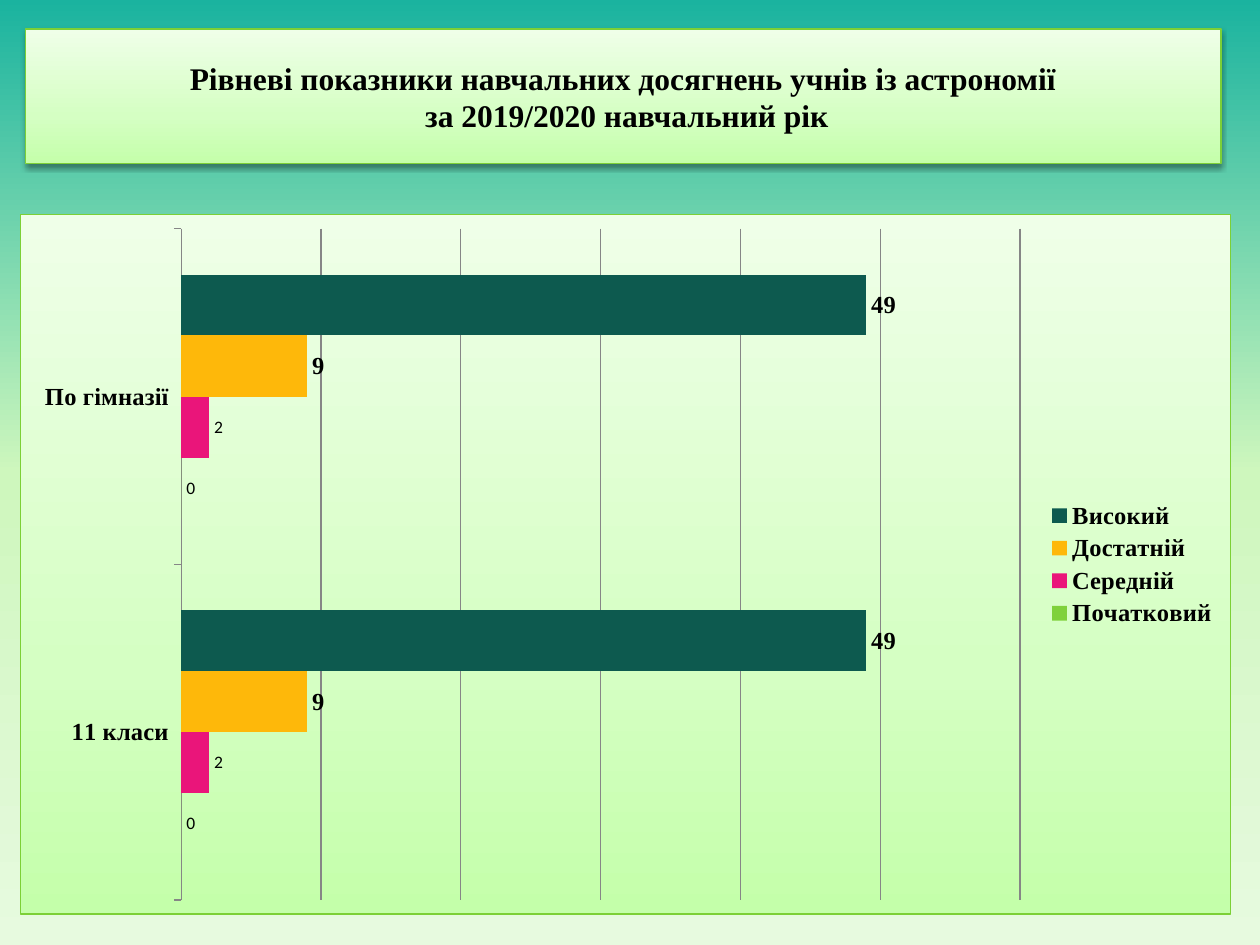
from lxml import etree
from pptx import Presentation
from pptx.chart.data import CategoryChartData
from pptx.dml.color import RGBColor
from pptx.enum.chart import XL_CHART_TYPE, XL_LABEL_POSITION, XL_LEGEND_POSITION, XL_TICK_MARK
from pptx.enum.text import MSO_ANCHOR, PP_ALIGN
from pptx.oxml.ns import qn
from pptx.util import Inches, Pt

BAR_CLUSTERED = XL_CHART_TYPE.BAR_CLUSTERED
OUTSIDE_END = XL_LABEL_POSITION.OUTSIDE_END
LEGEND_RIGHT = XL_LEGEND_POSITION.RIGHT
TICK_OUTSIDE, TICK_NONE = XL_TICK_MARK.OUTSIDE, XL_TICK_MARK.NONE
CENTER = PP_ALIGN.CENTER
MIDDLE = MSO_ANCHOR.MIDDLE

BLACK = RGBColor(0x00, 0x00, 0x00)
GRAY = RGBColor(0x86, 0x86, 0x86)
LIME = RGBColor(0x7C, 0xD0, 0x36)
GREEN = RGBColor(0x7F, 0xD1, 0x3B)
PINK = RGBColor(0xEA, 0x15, 0x7A)
AMBER = RGBColor(0xFE, 0xB8, 0x0A)
TEAL = RGBColor(0x0D, 0x5A, 0x4F)

BACKGROUND_STOPS = [(0, RGBColor(0x1A, 0xB3, 0x9F)), (50, RGBColor(0xCE, 0xF7, 0xBD)),
                    (100, RGBColor(0xE7, 0xFA, 0xDF))]
PANEL_STOPS = [(0, RGBColor(0xC4, 0xFF, 0xAA)), (35, RGBColor(0xD5, 0xFF, 0xC3)),
               (100, RGBColor(0xEF, 0xFF, 0xE8))]

TITLE_LINES = ["Рівневі показники навчальних досягнень учнів із астрономії",
               " за 2019/2020 навчальний рік"]
CATEGORIES = ["11 класи", "По гімназії"]
# Name, values, colour, emphasised labels
LEVELS = [("Початковий", (0, 0), GREEN, False),
          ("Середній", (2, 2), PINK, False),
          ("Достатній", (9, 9), AMBER, True),
          ("Високий", (49, 49), TEAL, True)]


def add_element(parent, tag, **attributes):
    return etree.SubElement(parent, qn(tag), attributes)


def add_color(parent, color):
    return add_element(parent, "a:srgbClr", val=str(color))


def set_gradient(gradient, stops, angle):
    """Give a gradFill element its stops (percent) and clockwise angle."""
    for child in list(gradient):
        gradient.remove(child)
    stop_list = add_element(gradient, "a:gsLst")
    for position, color in stops:
        add_color(add_element(stop_list, "a:gs", pos=str(position * 1000)), color)
    add_element(gradient, "a:lin", ang=str(angle * 60000), scaled="0")


class SlideBuilder:
    heading_font = "Times New Roman"
    body_font = "Calibri"
    line_width = Pt(0.75)

    def __init__(self, presentation):
        self.slide = presentation.slides.add_slide(presentation.slide_layouts[5])

    def format_font(self, font, size, heading=True):
        font.name = self.heading_font if heading else self.body_font
        font.size = Pt(size)
        font.bold = heading
        font.color.rgb = BLACK

    def set_background(self, stops, angle):
        fill = self.slide.background.fill
        fill.gradient()
        set_gradient(next(self.slide.element.iter(qn("a:gradFill"))), stops, angle)

    def add_title(self, lines, left, top, width, height):
        title = self.slide.shapes.title
        title.left, title.top = Inches(left), Inches(top)
        title.width, title.height = Inches(width), Inches(height)
        title.fill.gradient()
        set_gradient(title.element.spPr.find(qn("a:gradFill")), PANEL_STOPS, 270)
        title.line.color.rgb = LIME
        title.line.width = self.line_width

        # Soft shadow below the panel
        title.shadow.inherit = False
        effects = title.element.spPr.find(qn("a:effectLst"))
        shadow = add_element(effects, "a:outerShdw", blurRad=str(Pt(3.1)),
                             dist=str(Pt(1.6)), dir="5400000", rotWithShape="0")
        add_element(add_color(shadow, BLACK), "a:alpha", val="38000")

        title.text_frame.vertical_anchor = MIDDLE
        paragraph = title.text_frame.paragraphs[0]
        paragraph.alignment = CENTER
        for index, line in enumerate(lines):
            if index:
                paragraph.add_line_break()
            run = paragraph.add_run()
            run.text = line
            self.format_font(run.font, 18)

    def add_bar_chart(self, categories, levels, left, top, width, height):
        data = CategoryChartData()
        data.categories = categories
        for name, values, _, _ in levels:
            data.add_series(name, values)
        chart = self.slide.shapes.add_chart(
            BAR_CLUSTERED, Inches(left), Inches(top), Inches(width), Inches(height), data).chart
        self.format_font(chart.font, 10, heading=False)
        chart.has_title = False
        chart.has_legend = True
        chart.legend.position = LEGEND_RIGHT
        chart.legend.include_in_layout = False
        self.format_font(chart.legend.font, 14)
        self.format_chart_area(chart)

        # Axes
        category_axis = chart.category_axis
        category_axis.major_tick_mark = TICK_OUTSIDE
        category_axis.minor_tick_mark = TICK_NONE
        category_axis.format.line.color.rgb = GRAY
        self.format_font(category_axis.tick_labels.font, 14)
        value_axis = chart.value_axis
        value_axis.visible = False
        value_axis.minimum_scale, value_axis.maximum_scale = 0, 60
        value_axis.major_unit = 10
        value_axis.has_major_gridlines = True
        value_axis.major_gridlines.format.line.color.rgb = GRAY

        # Bars and their values
        plot = chart.plots[0]
        plot.gap_width = 150
        plot.vary_by_categories = False
        for series, (_, _, color, emphasised) in zip(plot.series, levels):
            series.format.fill.solid()
            series.format.fill.fore_color.rgb = color
            labels = series.data_labels
            labels.show_value = True
            labels.position = OUTSIDE_END
            self.format_font(labels.font, 14 if emphasised else 10, heading=emphasised)

    def format_chart_area(self, chart):
        chart_space = chart.element
        properties = add_element(chart_space, "c:spPr")
        chart_space.find(qn("c:chart")).addnext(properties)
        set_gradient(add_element(properties, "a:gradFill"), PANEL_STOPS, 270)
        line = add_element(properties, "a:ln", w=str(self.line_width))
        add_color(add_element(line, "a:solidFill"), LIME)


def main():
    presentation = Presentation()
    presentation.slide_width, presentation.slide_height = Inches(10), Inches(7.5)
    builder = SlideBuilder(presentation)
    builder.set_background(BACKGROUND_STOPS, 90)
    builder.add_title(TITLE_LINES, 0.2, 0.23, 9.49, 1.07)
    builder.add_bar_chart(CATEGORIES, LEVELS, 0.16, 1.7, 9.61, 5.56)
    presentation.save("out.pptx")


if __name__ == "__main__":
    main()
